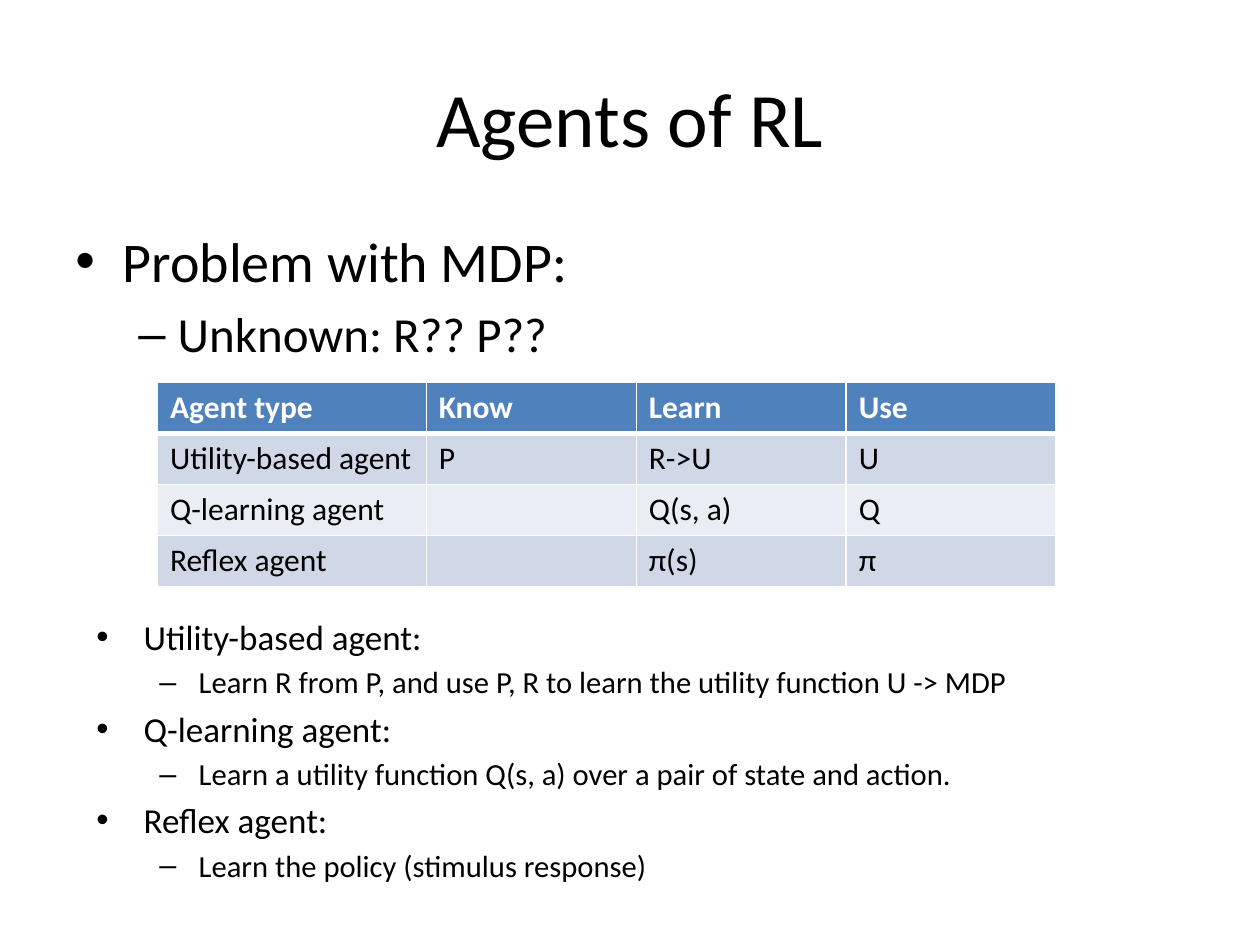
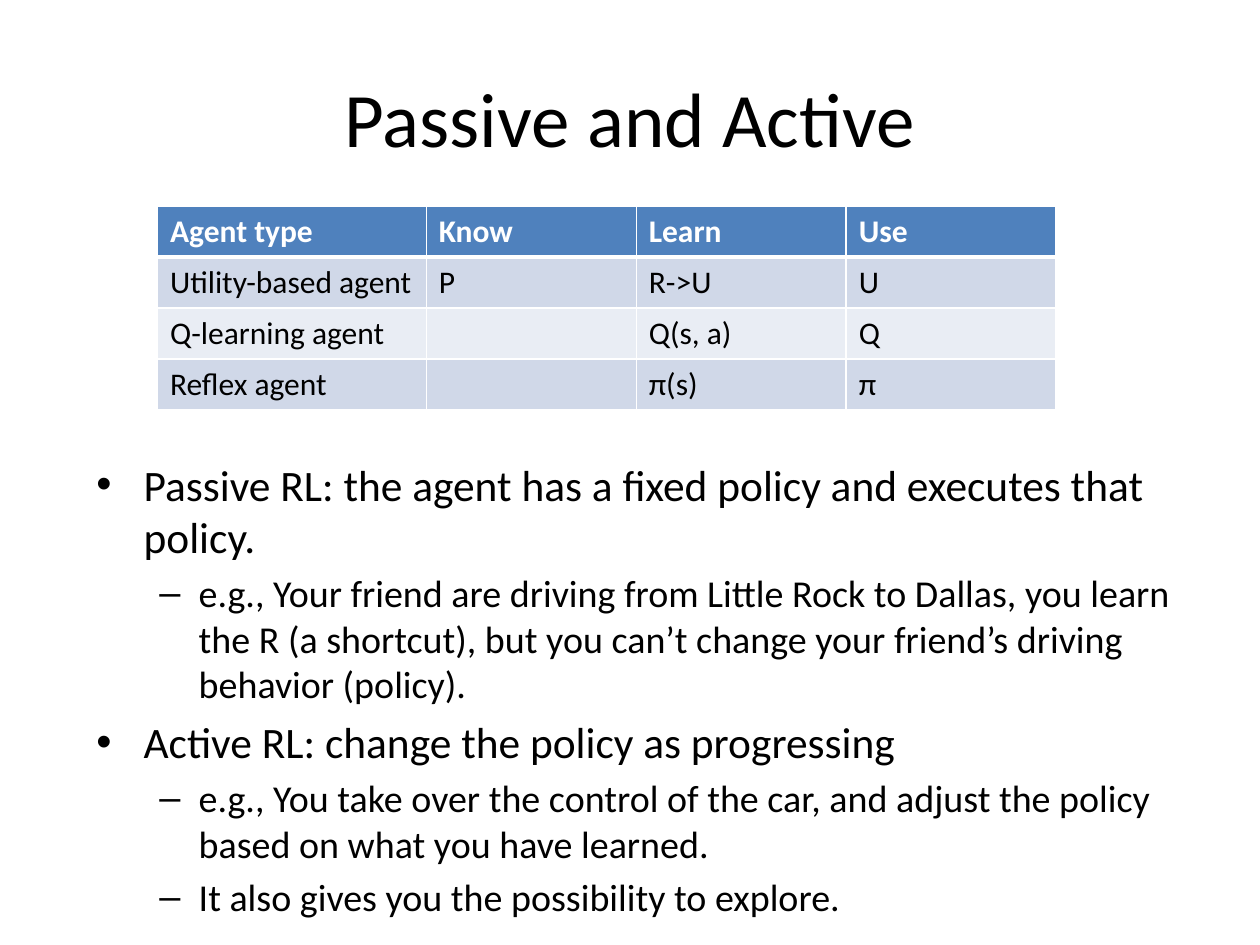
from lxml.etree import SubElement
from pptx import Presentation
from pptx.dml.color import RGBColor
from pptx.enum.text import MSO_ANCHOR as Anchor, PP_ALIGN as Align
from pptx.oxml.ns import qn
from pptx.util import Inches, Pt

# Shared style
FONT = "Calibri"
BLACK = RGBColor(0x00, 0x00, 0x00)
WHITE = RGBColor(0xFF, 0xFF, 0xFF)
BLUE = RGBColor(0x4F, 0x81, 0xBD)
DARK = RGBColor(0xD0, 0xD8, 0xE8)
PALE = RGBColor(0xE9, 0xED, 0xF4)

# Page grid: 120 columns by 90 rows of square units
WIDTH, HEIGHT = Inches(10), Inches(7.5)
UNIT = WIDTH / 120
TITLE = (6, 3.6, 108, 15)

# Per level: bullet, left margin and hang in grid units
LEVELS = [("•", 4.5, 4.5), ("–", 9.75, 3.75)]

AGENTS = [
    ["Agent type", "Know", "Learn", "Use"],
    ["Utility-based agent", "P", "R->U", "U"],
    ["Q-learning agent", "", "Q(s, a)", "Q"],
    ["Reflex agent", "", "π(s)", "π"],
]
COLS = [25.6, 20, 20, 20]
ROW = 4.87


def grid(*units):
    return [round(u * UNIT) for u in units]


def style(para, size, color=BLACK, bold=False):
    for run in para.runs:
        font = run.font
        font.name, font.size, font.bold = FONT, Pt(size), bold
        font.color.rgb = color


def add_box(slide, box):
    frame = slide.shapes.add_textbox(*grid(*box)).text_frame
    frame.word_wrap = True
    return frame


def add_title(slide, text):
    frame = add_box(slide, TITLE)
    frame.vertical_anchor = Anchor.MIDDLE
    frame.text = text
    para = frame.paragraphs[0]
    para.alignment = Align.CENTER
    style(para, 44)


def add_list(slide, box, sizes, items):
    """Place (level, text) items; sizes holds one font size per level."""
    frame = add_box(slide, box)
    frame.text = "\n".join(text for _, text in items)
    for para, (level, _) in zip(frame.paragraphs, items):
        mark, left, hang = LEVELS[level]
        size = sizes[level]
        para.level = level
        para.space_before = Pt(size * 0.2)
        style(para, size)
        # Hanging bullet
        props = para._p.get_or_add_pPr()
        margin, indent = grid(left, -hang)
        props.set("marL", str(margin))
        props.set("indent", str(indent))
        SubElement(props, qn("a:buFont"), typeface="Arial")
        SubElement(props, qn("a:buChar"), char=mark)


def add_edges(cell, top, bottom):
    """Draw white cell borders; widths are in points."""
    props = cell._tc.get_or_add_tcPr()
    for side, width in zip("LRTB", (1, 1, top, bottom)):
        line = SubElement(props, qn(f"a:ln{side}"), w=str(Pt(width)))
        fill = SubElement(line, qn("a:solidFill"))
        SubElement(fill, qn("a:srgbClr"), val=str(WHITE))


def add_agents(slide, left, top):
    box = grid(left, top, sum(COLS), ROW * len(AGENTS))
    table = slide.shapes.add_table(len(AGENTS), len(COLS), *box).table
    for col, width in zip(table.columns, grid(*COLS)):
        col.width = width
    for r, texts in enumerate(AGENTS):
        head = r == 0
        shade = BLUE if head else DARK if r % 2 else PALE
        for c, text in enumerate(texts):
            cell = table.cell(r, c)
            cell.text = text
            style(cell.text_frame.paragraphs[0], 18,
                  WHITE if head else BLACK, head)
            # The rule under the header is thicker
            add_edges(cell, 3 if r == 1 else 1, 3 if head else 1)
            cell.fill.solid()
            cell.fill.fore_color.rgb = shade


def add_slide(deck, title):
    slide = deck.slides.add_slide(deck.slide_layouts[6])
    add_title(slide, title)
    return slide


def agent_slide(deck):
    slide = add_slide(deck, "Agents of RL")
    add_list(slide, (6, 21, 108, 15), (32, 28), [
        (0, "Problem with MDP:"),
        (1, "Unknown: R?? P??"),
    ])
    add_agents(slide, 15, 36.4)
    add_list(slide, (8, 58, 108, 25), (20, 17.5), [
        (0, "Utility-based agent:"),
        (1, "Learn R from P, and use P, R to learn the utility function "
            "U -> MDP"),
        (0, "Q-learning agent:"),
        (1, "Learn a utility function Q(s, a) over a pair of state and "
            "action."),
        (0, "Reflex agent:"),
        (1, "Learn the policy (stimulus response)"),
    ])


def policy_slide(deck):
    slide = add_slide(deck, "Passive and Active")
    add_agents(slide, 15, 19.6)
    add_list(slide, (8, 43, 108, 40), (24.8, 21.7), [
        (0, "Passive RL: the agent has a fixed policy and executes that "
            "policy."),
        (1, "e.g., Your friend are driving from Little Rock to Dallas, you "
            "learn the R (a shortcut), but you can’t change your friend’s "
            "driving behavior (policy)."),
        (0, "Active RL: change the policy as progressing"),
        (1, "e.g., You take over the control of the car, and adjust the "
            "policy based on what you have learned."),
        (1, "It also gives you the possibility to explore."),
    ])


def main():
    deck = Presentation()
    deck.slide_width, deck.slide_height = WIDTH, HEIGHT
    agent_slide(deck)
    policy_slide(deck)
    deck.save("out.pptx")


if __name__ == "__main__":
    main()
